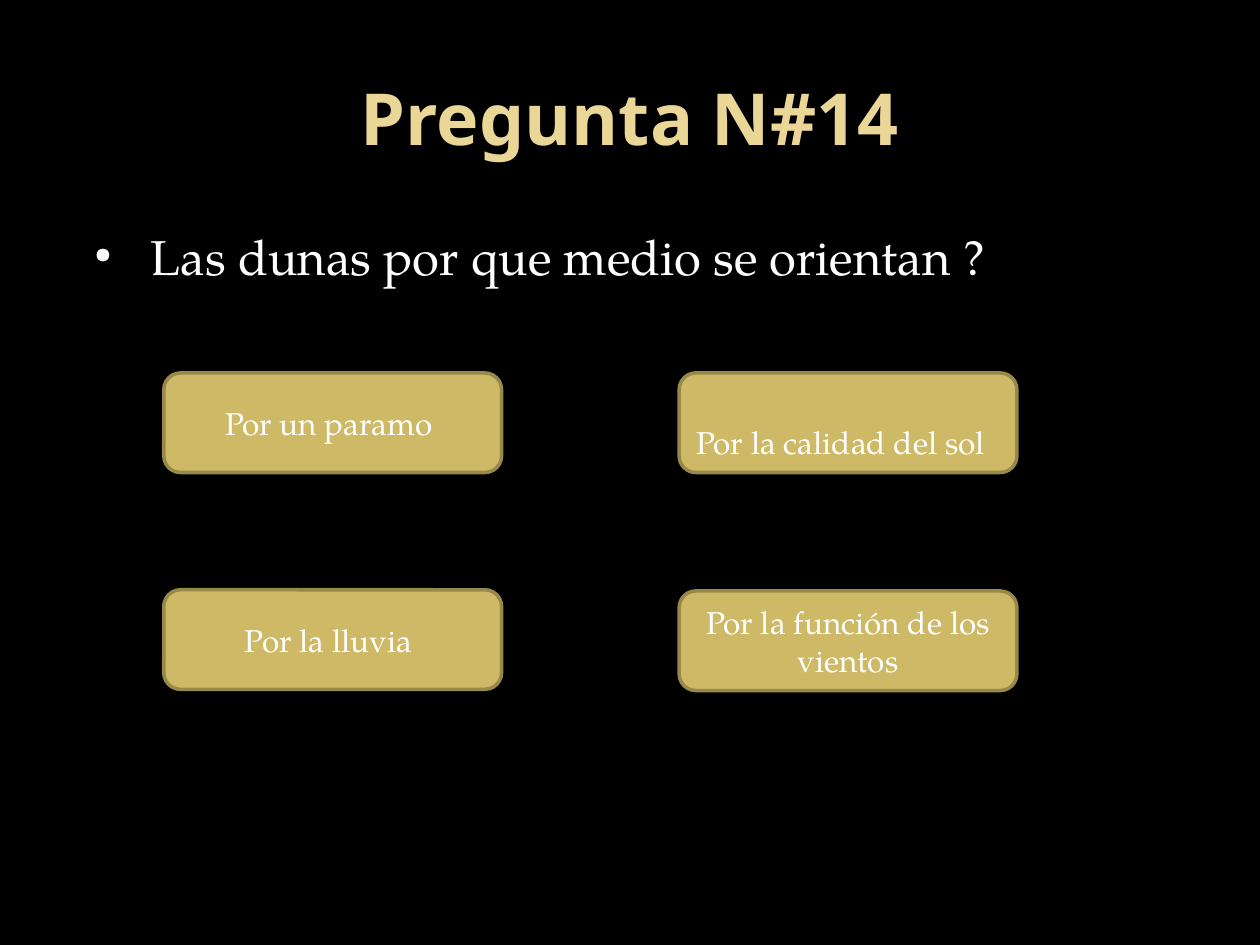
from dataclasses import dataclass

from lxml.etree import SubElement
from pptx import Presentation
from pptx.dml.color import RGBColor
from pptx.enum.shapes import MSO_SHAPE
from pptx.enum.text import MSO_ANCHOR, MSO_AUTO_SIZE, PP_ALIGN
from pptx.oxml.ns import qn
from pptx.util import Pt


@dataclass(frozen=True)
class Theme:
    background: str = "000000"
    title: str = "EAD696"
    text: str = "FFFFFF"
    bullet: str = "F9F9F9"
    button: str = "CEB966"
    border: str = "98894B"
    title_font: str = "Noto Sans"
    body_font: str = "TeX Gyre Pagella"
    title_size: int = 41
    question_size: int = 28
    answer_size: int = 18


class QuizSlide:
    def __init__(self, presentation, theme):
        self.theme = theme
        self.slide = presentation.slides.add_slide(presentation.slide_layouts[5])
        fill = self.slide.background.fill
        fill.solid()
        fill.fore_color.rgb = RGBColor.from_string(theme.background)

    def set_text(self, frame, text, font, size, color, align, anchor, bold=False):
        frame.word_wrap = True
        frame.auto_size = MSO_AUTO_SIZE.NONE
        frame.vertical_anchor = anchor
        paragraph = frame.paragraphs[0]
        paragraph.text = text
        paragraph.alignment = align
        paragraph.font.name = font
        paragraph.font.size = Pt(size)
        paragraph.font.bold = bold
        paragraph.font.color.rgb = RGBColor.from_string(color)
        return paragraph

    def title(self, text, left, top, width, height):
        shape = self.slide.shapes.title
        shape.left, shape.top = Pt(left), Pt(top)
        shape.width, shape.height = Pt(width), Pt(height)
        self.set_text(shape.text_frame, text, self.theme.title_font, self.theme.title_size,
                      self.theme.title, PP_ALIGN.CENTER, MSO_ANCHOR.MIDDLE, bold=True)

    def question(self, text, left, top, width, height):
        shape = self.slide.shapes.add_textbox(Pt(left), Pt(top), Pt(width), Pt(height))
        paragraph = self.set_text(shape.text_frame, text, self.theme.body_font,
                                  self.theme.question_size, self.theme.text,
                                  PP_ALIGN.LEFT, MSO_ANCHOR.TOP)
        paragraph.space_before = Pt(5.6)
        properties = paragraph._p.get_or_add_pPr()
        properties.set("marL", str(Pt(43.2)))
        properties.set("indent", str(Pt(-32.4)))
        bullet_color = SubElement(properties, qn("a:buClr"))
        SubElement(bullet_color, qn("a:srgbClr"), val=self.theme.bullet)
        SubElement(properties, qn("a:buSzPct"), val="65000")
        SubElement(properties, qn("a:buFont"), typeface=self.theme.body_font)
        SubElement(properties, qn("a:buChar"), char="•")
        properties.append(properties.find(qn("a:defRPr")))

    def answer(self, text, left, top, width, height, align=PP_ALIGN.CENTER, drop=0):
        shape = self.slide.shapes.add_shape(MSO_SHAPE.ROUNDED_RECTANGLE,
                                            Pt(left), Pt(top), Pt(width), Pt(height))
        shape.shadow.inherit = False
        shape.fill.solid()
        shape.fill.fore_color.rgb = RGBColor.from_string(self.theme.button)
        shape.line.color.rgb = RGBColor.from_string(self.theme.border)
        shape.line.width = Pt(2)
        shape.text_frame.margin_top = Pt(3.6 + drop)
        self.set_text(shape.text_frame, text, self.theme.body_font, self.theme.answer_size,
                      self.theme.text, align, MSO_ANCHOR.MIDDLE)


def main():
    presentation = Presentation()
    presentation.slide_width, presentation.slide_height = Pt(720), Pt(540)
    quiz = QuizSlide(presentation, Theme())
    quiz.title("Pregunta N#14", 36, 21.6, 648, 90)
    quiz.question("Las dunas por que medio se orientan ?", 36, 126, 648, 370.8)

    left_column, right_column = 93.6, 388.1
    upper_row, lower_row = 213.1, 337
    button = {"width": 193, "height": 56.9}
    quiz.answer("Por un paramo ", left_column, upper_row, **button)
    quiz.answer("Por la función de los vientos", right_column, lower_row + 0.7, **button)
    quiz.answer("Por la lluvia ", left_column, lower_row, **button)
    quiz.answer("Por la calidad del sol", right_column, upper_row,
                align=PP_ALIGN.LEFT, drop=22, **button)
    presentation.save("out.pptx")


if __name__ == "__main__":
    main()
